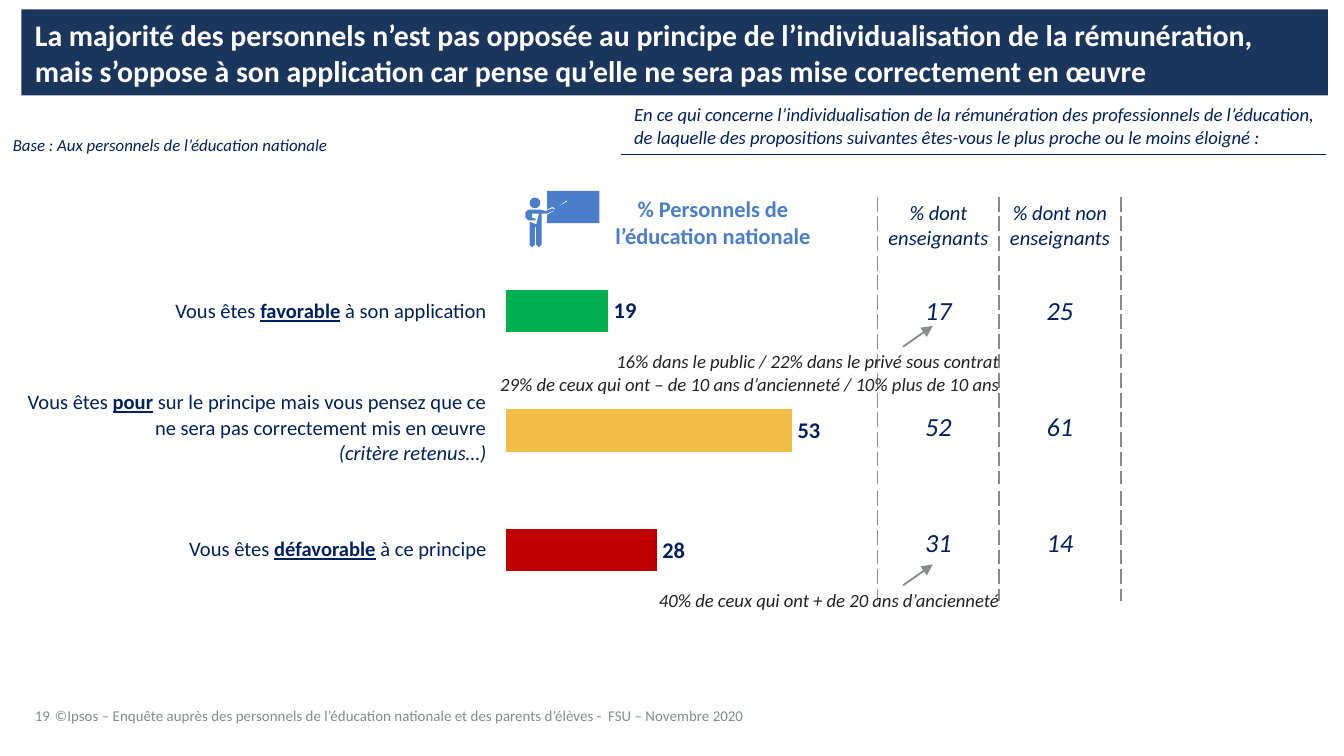
"""Build the survey slide on individualised pay in national education."""
from typing import NamedTuple

from lxml.etree import SubElement
from pptx import Presentation
from pptx.chart.data import CategoryChartData
from pptx.dml.color import RGBColor
from pptx.enum.chart import XL_CHART_TYPE, XL_LABEL_POSITION
from pptx.enum.shapes import MSO_CONNECTOR, MSO_SHAPE
from pptx.enum.text import MSO_ANCHOR, MSO_AUTO_SIZE, PP_ALIGN
from pptx.oxml import parse_xml
from pptx.oxml.ns import nsdecls, qn
from pptx.util import Emu, Inches, Pt

COLUMNS, ROWS, CELL = 100, 56.25, Inches(0.1)
FONT = "Calibri"
WHITE = RGBColor(0xFF, 0xFF, 0xFF)
BANNER = RGBColor(0x1B, 0x36, 0x5D)
NAVY = RGBColor(0x00, 0x20, 0x60)
BLUE = RGBColor(0x4A, 0x7E, 0xCA)
GREY = RGBColor(0x88, 0x8B, 0x8D)
INK = RGBColor(0x22, 0x22, 0x23)
BAR_COLORS = (RGBColor(0x00, 0xB0, 0x50), RGBColor(0xF1, 0xBE, 0x48), RGBColor(0xC0, 0x00, 0x00))


class Style(NamedTuple):
    size: float
    color: RGBColor
    bold: bool = False
    italic: bool = False
    align: PP_ALIGN = PP_ALIGN.LEFT


class Label(NamedTuple):
    box: tuple
    lines: tuple
    style: Style
    inset: bool = True
    anchor: MSO_ANCHOR = MSO_ANCHOR.TOP
    wrap: bool = True
    spacing: float = 1.0


class Answer(NamedTuple):
    key: str
    after: str
    total: int
    teachers: int
    others: int
    aside: str = ""


NOTE = Style(10, INK, italic=True, align=PP_ALIGN.RIGHT)
FOOTER = Style(8, GREY)
ANSWER = Style(11, NAVY, align=PP_ALIGN.RIGHT)
COLUMN_HEAD = Style(11, NAVY, italic=True, align=PP_ALIGN.CENTER)
FIGURE = COLUMN_HEAD._replace(size=14)

TITLE = ("La majorité des personnels n’est pas opposée au principe de l’individualisation de la rémunération, "
         "mais s’oppose à son application car pense qu’elle ne sera pas mise correctement en œuvre")
ANSWERS = (
    Answer("favorable", " à son application", 19, 17, 25),
    Answer("pour", " sur le principe mais vous pensez que ce ne sera pas correctement mis en œuvre",
           53, 52, 61, "(critère retenus…)"),
    Answer("défavorable", " à ce principe", 28, 31, 14),
)
LABELS = (
    Label((2.6, 51.3, 3.4, 2.6), ("19",), FOOTER, False, MSO_ANCHOR.BOTTOM, False, 0.85),
    Label((46.2, 6.9, 53.2, 4.9), (
        "En ce qui concerne l’individualisation de la rémunération des professionnels de l’éducation, "
        "de laquelle des propositions suivantes êtes-vous le plus proche ou le moins éloigné :",),
        Style(10, NAVY, italic=True), anchor=MSO_ANCHOR.MIDDLE),
    Label((3.1, 52.1, 73.9, 2), (
        "©Ipsos – Enquête auprès des personnels de l’éducation nationale et des parents d’élèves -  "
        "FSU – Novembre 2020",), FOOTER),
    Label((0.95, 10, 23.9, 1.5), ("Base : Aux personnels de l’éducation nationale",),
          Style(9, NAVY, italic=True), False),
    Label((43.5, 14.05, 19.1, 5), ("% Personnels de l’éducation nationale",),
          Style(12, BLUE, bold=True, align=PP_ALIGN.CENTER)),
)
NOTES = (
    Label((36.4, 26.05, 37.9, 3.4), (
        "16% dans le public / 22% dans le privé sous contrat",
        "29% de ceux qui ont – de 10 ans d’ancienneté / 10% plus de 10 ans"), NOTE, False),
    Label((36.4, 43.8, 37.9, 1.7), ("40% de ceux qui ont + de 20 ans d’ancienneté",), NOTE, False),
)
BOARD = ((40.7, 14.2), (44.6, 14.2), (44.6, 16.6), (40.7, 16.6), (40.7, 16), (41.2, 15.7),
         (41.3, 15.5), (42.2, 15), (42.2, 14.9), (41.3, 15.5), (41.1, 15.4), (40.7, 15.6))
BODY = ((39.3, 15.6), (40.2, 15.6), (40.6, 15.7), (41.1, 15.5), (41.3, 15.6), (40.7, 15.9), (40.3, 15.9),
        (40.3, 18.2), (40.1, 18.4), (39.9, 18.2), (39.9, 16.9), (39.8, 16.9), (39.8, 18.2), (39.6, 18.4),
        (39.4, 18.2), (39.4, 16.5), (39.9, 16.7), (40.1, 15.9), (39.6, 15.9), (39.6, 16.2), (39.9, 16.3),
        (39.8, 16.4), (39.3, 16.4), (39.1, 16.2), (39.1, 15.8))


def u(*lengths: float) -> list[Emu]:
    return [Emu(round(n * CELL)) for n in lengths]


def add_run(p, text: str, style: Style, underline: bool = False) -> None:
    r = p.add_run()
    r.text, f = text, r.font
    f.name, f.size, f.color.rgb = FONT, Pt(style.size), style.color
    f.bold, f.italic, f.underline = style.bold, style.italic, underline
    p.alignment = style.align


def add_label(shapes, label: Label) -> None:
    tf = shapes.add_textbox(*u(*label.box)).text_frame
    tf.word_wrap, tf.vertical_anchor = label.wrap, label.anchor
    if not label.inset:
        tf.margin_left = tf.margin_top = tf.margin_right = tf.margin_bottom = 0
    for i, line in enumerate(label.lines):
        p = tf.add_paragraph() if i else tf.paragraphs[0]
        p.line_spacing = label.spacing
        add_run(p, line, label.style)


def add_line(shapes, ends: tuple, color: RGBColor, width: float, arrow: bool = False) -> None:
    sp = shapes.add_connector(MSO_CONNECTOR.STRAIGHT, *u(*ends))
    sp.line.color.rgb, sp.line.width = color, Pt(width)
    if arrow:
        SubElement(sp._element.spPr.find(qn("a:ln")), qn("a:tailEnd"), type="triangle")
    SubElement(sp._element.spPr, qn("a:effectLst"))


def paint(sp, color: RGBColor) -> None:
    sp.shadow.inherit = False
    sp.fill.solid()
    sp.fill.fore_color.rgb = color
    sp.line.fill.background()


def add_outline(shapes, points: tuple, color: RGBColor) -> None:
    corners = [u(*point) for point in points]
    fb = shapes.build_freeform(*corners[0])
    fb.add_line_segments(corners[1:], close=True)
    paint(fb.convert_to_shape(), color)


def add_grid(shapes, box: tuple, columns: int, heights: tuple, margin: float):
    table = shapes.add_table(len(heights), columns, *u(*box)).table
    table.first_row = table.horz_banding = False
    for row, h in zip(table.rows, u(*heights)):
        row.height = h
    for cell in table.iter_cells():
        cell.vertical_anchor = MSO_ANCHOR.MIDDLE
        cell.margin_left, cell.margin_right, cell.margin_top, cell.margin_bottom = u(margin, margin, 0.1, 0)
        cell.fill.background()
    return table


def add_answers(shapes) -> None:
    table = add_grid(shapes, (1.8, 19.8, 34.5, 24.8), 1, (6.7, 10.6, 7.5), 0.1)
    for cell, a in zip(table.iter_cells(), ANSWERS):
        p = cell.text_frame.paragraphs[0]
        add_run(p, "Vous êtes ", ANSWER)
        add_run(p, a.key, ANSWER._replace(bold=True), underline=True)
        add_run(p, a.after, ANSWER)
        if a.aside:
            p.add_line_break()
            add_run(p, a.aside, ANSWER._replace(italic=True))


def add_figures(shapes) -> None:
    table = add_grid(shapes, (65.3, 14.7, 18.1, 30.1), 2, (4.1, 8.65, 8.65, 8.65), 0)
    texts = ["% dont enseignants", "% dont non enseignants"]
    texts += [str(n) for a in ANSWERS for n in (a.teachers, a.others)]
    for i, (cell, text) in enumerate(zip(table.iter_cells(), texts)):
        cell.fill.solid()
        cell.fill.fore_color.rgb = WHITE
        add_run(cell.text_frame.paragraphs[0], text, COLUMN_HEAD if i < 2 else FIGURE)
        for k, side in enumerate(("lnL", "lnR")):
            cell._tc.tcPr.insert(k, parse_xml(
                f'<a:{side} {nsdecls("a")} w="12700"><a:solidFill><a:srgbClr val="{GREY}"/>'
                f'</a:solidFill><a:prstDash val="sysDash"/></a:{side}>'))


def add_bars(shapes) -> None:
    data = CategoryChartData()
    data.categories = ["1", "2", "3"]
    data.add_series("Series 1", [a.total for a in ANSWERS])
    chart = shapes.add_chart(XL_CHART_TYPE.BAR_CLUSTERED, *u(36.3, 14.5, 33.1, 32.2), data).chart
    chart.has_legend = chart.has_title = False
    chart.font.name, chart.font.size, chart.font.color.rgb = FONT, Pt(10), INK
    cat, val = chart.category_axis, chart.value_axis
    cat.visible = val.visible = val.has_major_gridlines = False
    cat.reverse_order = True
    val.minimum_scale, val.maximum_scale = 0, 60
    plot = chart.plots[0]
    plot.gap_width, plot.vary_by_categories, plot.has_data_labels = 182, False, True
    labels = plot.data_labels
    labels.show_value, labels.position, f = True, XL_LABEL_POSITION.OUTSIDE_END, labels.font
    f.name, f.size, f.bold, f.color.rgb = FONT, Pt(12), True, NAVY
    for i, color in enumerate(BAR_COLORS):
        fill = plot.series[0].points[i].format.fill
        fill.solid()
        fill.fore_color.rgb = color
    area = chart._chartSpace.chart.plotArea
    for old in area.findall(qn("c:layout")):
        area.remove(old)
    area.insert(0, parse_xml(
        f'<c:layout {nsdecls("c")}><c:manualLayout><c:layoutTarget val="inner"/><c:xMode val="edge"/>'
        '<c:yMode val="edge"/><c:x val="0.04"/><c:y val="0.13"/><c:w val="0.73"/><c:h val="0.83"/>'
        '</c:manualLayout></c:layout>'))


def add_title(sp) -> None:
    sp.left, sp.top, sp.width, sp.height = u(1.6, 0.7, 97.2, 6.4)
    paint(sp, BANNER)
    tf = sp.text_frame
    tf.word_wrap, tf.auto_size, tf.vertical_anchor = True, MSO_AUTO_SIZE.NONE, MSO_ANCHOR.MIDDLE
    add_run(tf.paragraphs[0], TITLE, Style(16, WHITE, bold=True))


def main() -> None:
    prs = Presentation()
    prs.slide_width, prs.slide_height = u(COLUMNS, ROWS)
    shapes = prs.slides.add_slide(prs.slide_layouts[5]).shapes
    add_title(shapes.title)
    add_line(shapes, (46.2, 11.5, 98.7, 11.5), NAVY, 0.5)
    add_answers(shapes)
    add_figures(shapes)
    add_outline(shapes, BOARD, BLUE)
    paint(shapes.add_shape(MSO_SHAPE.OVAL, *u(39.4, 14.7, 0.8, 0.8)), BLUE)
    add_outline(shapes, BODY, BLUE)
    for label in LABELS:
        add_label(shapes, label)
    add_bars(shapes)
    for note in NOTES:
        top = note.box[1]
        add_label(shapes, note)
        add_line(shapes, (67.2, top - 0.25, 69.4, top - 1.8), GREY, 1, arrow=True)
    prs.save("out.pptx")


if __name__ == "__main__":
    main()
